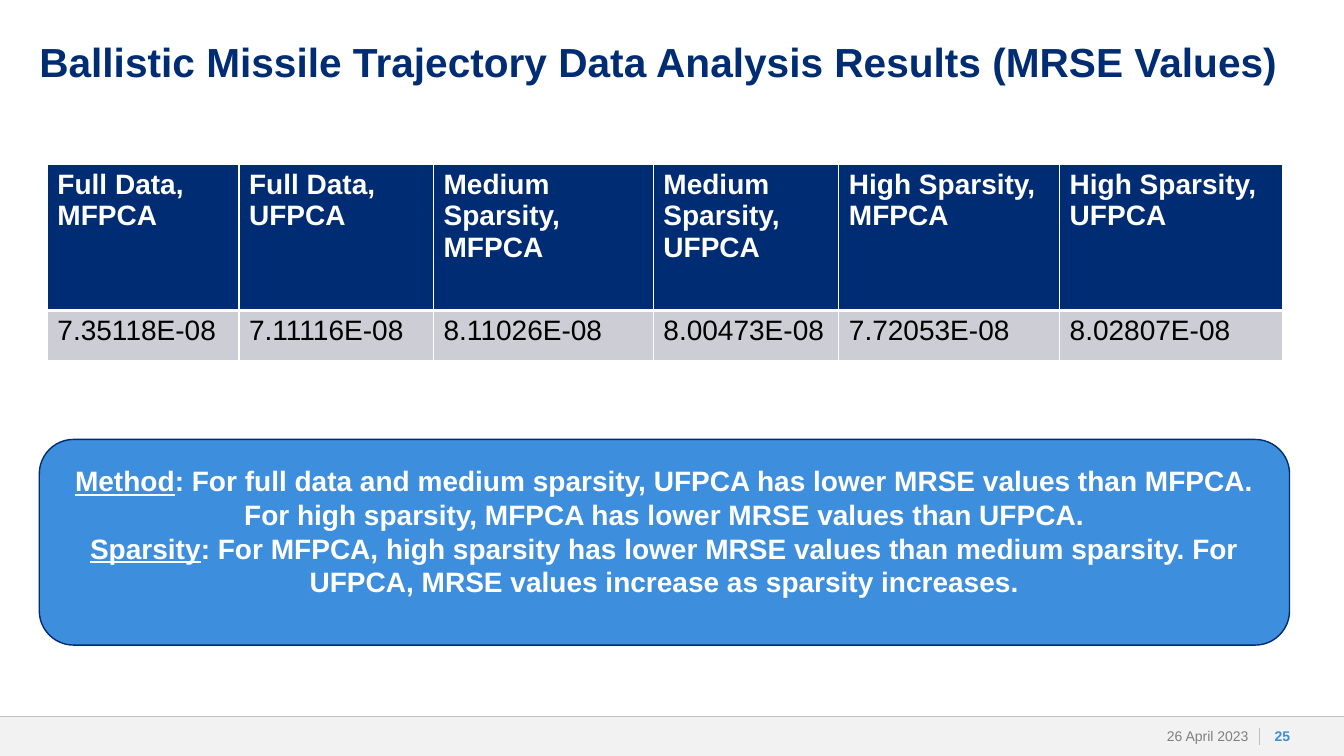
import dataclasses

import lxml.etree
import pptx
import pptx.dml.color
import pptx.enum.shapes
import pptx.enum.text
import pptx.oxml.ns
import pptx.util

Inches = pptx.util.Inches
Pt = pptx.util.Pt
Align = pptx.enum.text.PP_ALIGN
Anchor = pptx.enum.text.MSO_ANCHOR
Preset = pptx.enum.shapes.MSO_SHAPE


@dataclasses.dataclass(frozen=True)
class Theme:
    font: str = "Arial"
    navy: str = "002C73"
    blue: str = "3E8EDE"
    white: str = "FFFFFF"
    black: str = "000000"
    cell: str = "CCCDD5"
    footer: str = "F2F2F2"
    rule: str = "BFBFBF"
    date: str = "808080"
    title_size: int = 29
    body_size: int = 20
    footer_size: int = 10


@dataclasses.dataclass(frozen=True)
class Box:
    left: float
    top: float
    width: float
    height: float

    def lengths(self) -> tuple:
        return tuple(Inches(value) for value in dataclasses.astuple(self))


@dataclasses.dataclass(frozen=True)
class Label:
    text: str
    box: Box
    size: int
    color: str
    bold: bool = True
    align: Align = Align.LEFT
    anchor: Anchor = Anchor.MIDDLE
    side_inset: float = 0
    line_spacing: float = 1.0


@dataclasses.dataclass(frozen=True)
class Result:
    sparsity: str
    method: str
    value: str
    width: float


@dataclasses.dataclass(frozen=True)
class Finding:
    topic: str
    text: str


THEME = Theme()
FOOTER_TOP = 7.11
FOOTER_HEIGHT = 0.39
FOOTER_BOX = Box(0, FOOTER_TOP, 13.33, FOOTER_HEIGHT)
FOOTER_RULES = [(0, FOOTER_TOP, 13.33, FOOTER_TOP), (12.49, 7.22, 12.49, 7.39)]
LABELS = [
    Label("26 April 2023", Box(10.98, FOOTER_TOP, 1.5, FOOTER_HEIGHT), THEME.footer_size,
          THEME.date, bold=False, align=Align.RIGHT, side_inset=0.1),
    Label("25", Box(12.51, FOOTER_TOP, 0.42, FOOTER_HEIGHT), THEME.footer_size,
          THEME.blue, align=Align.CENTER),
    Label("Ballistic Missile Trajectory Data Analysis Results (MRSE Values)",
          Box(0.39, 0.42, 12.33, 0.83), THEME.title_size, THEME.navy,
          anchor=Anchor.TOP, line_spacing=0.9),
]
TABLE_BOX = Box(0.47, 1.63, 12.25, 1.95)
ROW_HEIGHTS = (1.45, 0.5)
RESULTS = [
    Result("Full Data,", "MFPCA", "7.35118E-08", 1.9),
    Result("Full Data,", "UFPCA", "7.11116E-08", 1.93),
    Result("Medium Sparsity,", "MFPCA", "8.11026E-08", 2.18),
    Result("Medium Sparsity,", "UFPCA", "8.00473E-08", 1.84),
    Result("High Sparsity,", "MFPCA", "7.72053E-08", 2.19),
    Result("High Sparsity,", "UFPCA", "8.02807E-08", 2.21),
]
CALLOUT_BOX = Box(0.39, 4.36, 12.4, 2.04)
FINDINGS = [
    Finding("Method", ": For full data and medium sparsity, UFPCA has lower MRSE values than MFPCA. "
            "For high sparsity, MFPCA has lower MRSE values than UFPCA."),
    Finding("Sparsity", ": For MFPCA, high sparsity has lower MRSE values than medium sparsity. "
            "For UFPCA, MRSE values increase as sparsity increases."),
]


def rgb(color: str) -> pptx.dml.color.RGBColor:
    """Turn a hex string into a colour."""
    return pptx.dml.color.RGBColor.from_string(color)


def style_font(paragraph, size: int, color: str, bold: bool) -> None:
    """Set the font of a whole paragraph."""
    font = paragraph.font
    font.name, font.size, font.bold = THEME.font, Pt(size), bold
    font.color.rgb = rgb(color)


def add_panel(slide, preset: Preset, box: Box, fill: str):
    """Add a flat filled shape without an outline."""
    shape = slide.shapes.add_shape(preset, *box.lengths())
    shape.shadow.inherit = False
    shape.fill.solid()
    shape.fill.fore_color.rgb = rgb(fill)
    shape.line.fill.background()
    return shape


def add_rule(slide, ends: tuple[float, float, float, float]) -> None:
    """Add a thin grey footer line."""
    rule = slide.shapes.add_connector(
        pptx.enum.shapes.MSO_CONNECTOR.STRAIGHT, *(Inches(value) for value in ends))
    rule.line.color.rgb = rgb(THEME.rule)
    rule.line.width = Pt(0.5)
    lxml.etree.SubElement(rule._element.spPr, pptx.oxml.ns.qn("a:effectLst"))


def add_label(slide, label: Label) -> None:
    """Add a single-paragraph text box."""
    frame = slide.shapes.add_textbox(*label.box.lengths()).text_frame
    frame.word_wrap = True
    frame.vertical_anchor = label.anchor
    frame.margin_left = frame.margin_right = Inches(label.side_inset)
    frame.margin_top = frame.margin_bottom = 0
    paragraph = frame.paragraphs[0]
    paragraph.text = label.text
    paragraph.alignment = label.align
    paragraph.line_spacing = label.line_spacing
    style_font(paragraph, label.size, label.color, label.bold)


def add_borders(cell, widths: dict[str, float]) -> None:
    """Draw white cell borders of the given widths in points."""
    properties = cell._tc.get_or_add_tcPr()
    for index, (side, width) in enumerate(widths.items()):
        line = pptx.oxml.parse_xml(
            f'<a:{side} {pptx.oxml.ns.nsdecls("a")} w="{Pt(width)}"><a:solidFill>'
            f'<a:srgbClr val="{THEME.white}"/></a:solidFill></a:{side}>')
        properties.insert(index, line)


def fill_cell(cell, text: str, is_header: bool) -> None:
    """Write and style one table cell."""
    cell.text = text
    for paragraph in cell.text_frame.paragraphs:
        style_font(paragraph, THEME.body_size, THEME.white if is_header else THEME.black, is_header)
    cell.fill.solid()
    cell.fill.fore_color.rgb = rgb(THEME.navy if is_header else THEME.cell)
    add_borders(cell, {"lnL": 1, "lnR": 1, "lnT": 1 if is_header else 3, "lnB": 3 if is_header else 1})


def add_results(slide) -> None:
    """Add the table of MRSE values."""
    table = slide.shapes.add_table(len(ROW_HEIGHTS), len(RESULTS), *TABLE_BOX.lengths()).table
    for row, height in zip(table.rows, ROW_HEIGHTS):
        row.height = Inches(height)
    for index, result in enumerate(RESULTS):
        table.columns[index].width = Inches(result.width)
        fill_cell(table.cell(0, index), f"{result.sparsity}\n{result.method}", True)
        fill_cell(table.cell(1, index), result.value, False)


def add_findings(slide) -> None:
    """Add the rounded callout with underlined topics."""
    callout = add_panel(slide, Preset.ROUNDED_RECTANGLE, CALLOUT_BOX, THEME.blue)
    callout.line.color.rgb = rgb(THEME.navy)
    callout.line.width = Pt(1)
    frame = callout.text_frame
    frame.word_wrap = True
    frame.vertical_anchor = Anchor.MIDDLE
    frame.margin_bottom = Inches(0.27)
    for index, finding in enumerate(FINDINGS):
        paragraph = frame.add_paragraph() if index else frame.paragraphs[0]
        paragraph.alignment = Align.CENTER
        paragraph.line_spacing = Pt(24)
        style_font(paragraph, THEME.body_size, THEME.white, True)
        for text, underline in ((finding.topic, True), (finding.text, False)):
            run = paragraph.add_run()
            run.text = text
            run.font.underline = underline


def main() -> None:
    """Build and save the slide."""
    presentation = pptx.Presentation()
    presentation.slide_width, presentation.slide_height = Inches(13.33), Inches(7.5)
    slide = presentation.slides.add_slide(presentation.slide_layouts[6])
    add_panel(slide, Preset.RECTANGLE, FOOTER_BOX, THEME.footer)
    for ends in FOOTER_RULES:
        add_rule(slide, ends)
    for label in LABELS:
        add_label(slide, label)
    add_results(slide)
    add_findings(slide)
    presentation.save("out.pptx")


if __name__ == "__main__":
    main()
